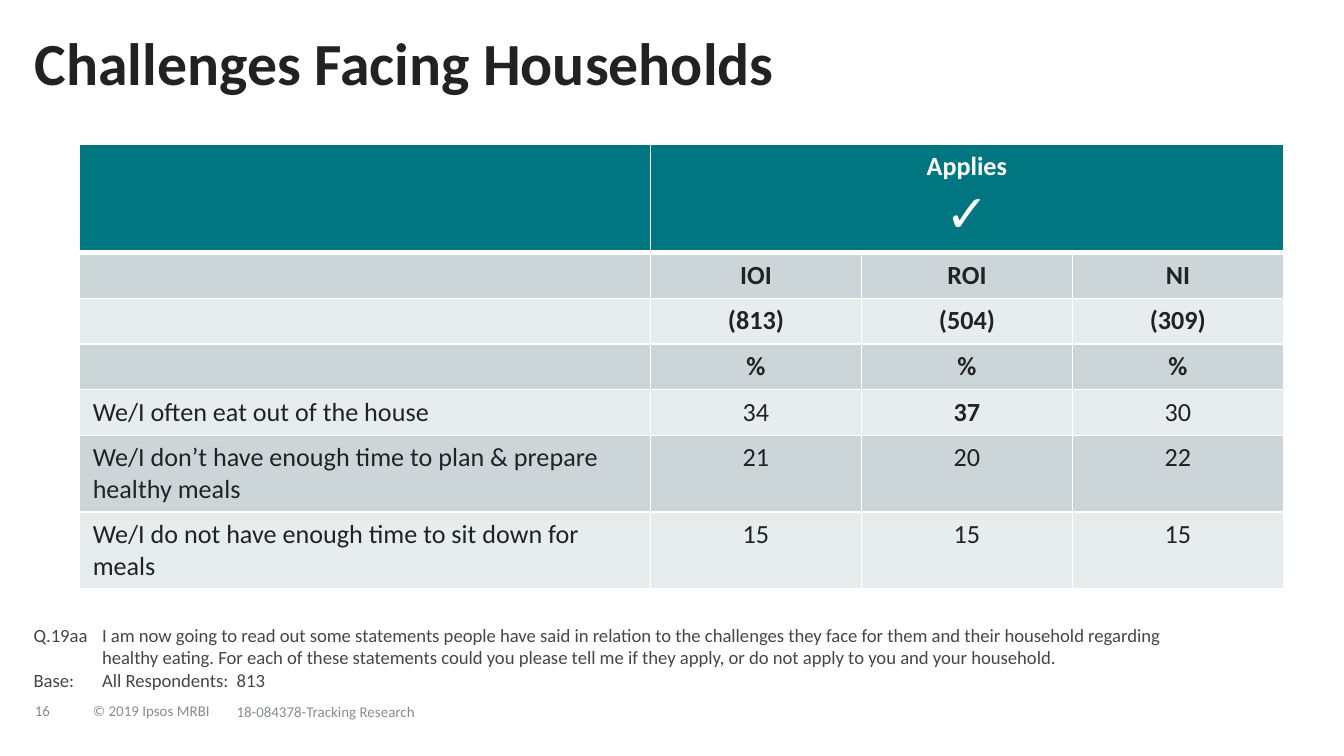
from lxml.etree import SubElement
from pptx import Presentation
from pptx.dml.color import RGBColor
from pptx.enum.text import MSO_ANCHOR, PP_ALIGN
from pptx.oxml.ns import qn
from pptx.util import Inches, Pt

TEAL = RGBColor(0x00, 0x76, 0x81)
MIST = RGBColor(0xCC, 0xD6, 0xD8)
PALE = RGBColor(0xE7, 0xEC, 0xED)
WHITE = RGBColor(0xFF, 0xFF, 0xFF)
INK = RGBColor(0x22, 0x22, 0x23)
SLATE = RGBColor(0x44, 0x46, 0x47)
GREY = RGBColor(0x88, 0x8B, 0x8D)

ROWS = [
    ["", "IOI", "ROI", "NI"],
    ["", "(813)", "(504)", "(309)"],
    ["", "%", "%", "%"],
    ["We/I often eat out of the house", "34", "37", "30"],
    ["We/I don’t have enough time to plan & prepare healthy meals", "21", "20", "22"],
    ["We/I do not have enough time to sit down for meals", "15", "15", "15"],
]
LABELS = 3  # rows of column labels, set in bold
PEAK = (3, 2)  # highlighted value
WIDTHS = [4.25] + [1.57] * 3
HEIGHTS = [0.81] + [0.34] * 4 + [0.57] * 2
NOTES = [
    "Q.19aa\tI am now going to read out some statements people have said in "
    "relation to the challenges they face for them and their household regarding "
    "healthy eating. For each of these statements could you please tell me if they "
    "apply, or do not apply to you and your household.",
    "Base:\tAll Respondents:  813",
]
FOOTER = [
    ((0.26, 5.17, 0.34, 0.26), "16"),
    ((0.69, 5.21, 0.92, 0.18), "© 2019 Ipsos MRBI"),
    ((1.76, 5.15, 2.72, 0.31), "18-084378-Tracking Research"),
]


def style(font, size, color, bold=False):
    values = {"name": "Calibri", "size": Pt(size), "bold": bold}
    for key, value in values.items():
        setattr(font, key, value)
    font.color.rgb = color


def add_text(slide, box, lines, size, color, bold=False, spacing=1.0,
             anchor=MSO_ANCHOR.MIDDLE, wrap=True, hang=0):
    shape = slide.shapes.add_textbox(*map(Inches, box))
    frame = shape.text_frame
    values = {"margin_left": 0, "margin_right": 0, "margin_top": 0,
              "margin_bottom": 0, "word_wrap": wrap, "vertical_anchor": anchor}
    for key, value in values.items():
        setattr(frame, key, value)
    for i, line in enumerate(lines):
        para = frame.paragraphs[0] if i == 0 else frame.add_paragraph()
        para.line_spacing = spacing
        if hang:
            props = para._p.get_or_add_pPr()
            props.set("marL", str(Inches(hang)))
            props.set("indent", str(-Inches(hang)))
        run = para.add_run()
        run.text = line
        style(run.font, size, color, bold)


def paint(cell, fill, base=1):
    """Fill a cell and draw its white borders; base is the bottom width."""
    props = cell._tc.get_or_add_tcPr()
    for side, width in {"L": 1, "R": 1, "T": 1, "B": base}.items():
        line = SubElement(props, qn(f"a:ln{side}"), w=str(Pt(width)))
        solid = SubElement(line, qn("a:solidFill"))
        SubElement(solid, qn("a:srgbClr"), val=str(WHITE))
    cell.fill.solid()
    cell.fill.fore_color.rgb = fill


def write(para, text, size, color, bold, align):
    para.alignment = align
    if text:
        run = para.add_run()
        run.text = text
        style(run.font, size, color, bold)
    else:  # keeps an empty cell as low as its row
        SubElement(para._p, qn("a:endParaRPr"), sz=str(size * 100))


def add_grid(slide, box):
    frame = slide.shapes.add_table(len(HEIGHTS), len(WIDTHS), *map(Inches, box))
    table = frame.table
    for col, width in zip(table.columns, WIDTHS):
        col.width = Inches(width)
    for row, height in zip(table.rows, HEIGHTS):
        row.height = Inches(height)

    # Header band
    for c in range(len(WIDTHS)):
        paint(table.cell(0, c), TEAL, 3)
    head = table.cell(0, 1)
    head.merge(table.cell(0, 3))
    head.vertical_anchor = MSO_ANCHOR.MIDDLE
    first = head.text_frame.paragraphs[0]
    write(first, "Applies", 14, WHITE, True, PP_ALIGN.CENTER)
    tick = head.text_frame.add_paragraph()
    write(tick, "✓", 28, WHITE, True, PP_ALIGN.CENTER)

    # Labels and values
    for r, row in enumerate(ROWS):
        for c, text in enumerate(row):
            cell = table.cell(r + 1, c)
            paint(cell, PALE if r % 2 else MIST)
            bold = r < LABELS or (r, c) == PEAK
            align = PP_ALIGN.CENTER if c else PP_ALIGN.LEFT
            write(cell.text_frame.paragraphs[0], text, 14, INK, bold, align)


def add_footer(slide):
    for box, text in FOOTER:
        add_text(slide, box, [text], 8, GREY, spacing=0.85, wrap=False)


def main():
    deck = Presentation()
    deck.slide_width, deck.slide_height = Inches(10), Inches(10 * 9 / 16)
    slide = deck.slides.add_slide(deck.slide_layouts[6])
    add_footer(slide)
    add_text(slide, (0.26, 0.25, 7.95, 0.48), ["Challenges Facing Households"],
             32, INK, bold=True, spacing=0.9)
    add_text(slide, (0.25, 4.35, 8.54, 0.79), NOTES, 10, SLATE,
             anchor=MSO_ANCHOR.BOTTOM, hang=0.51)
    add_grid(slide, (0.59, 1.07, sum(WIDTHS), sum(HEIGHTS)))
    deck.save("out.pptx")


if __name__ == "__main__":
    main()
